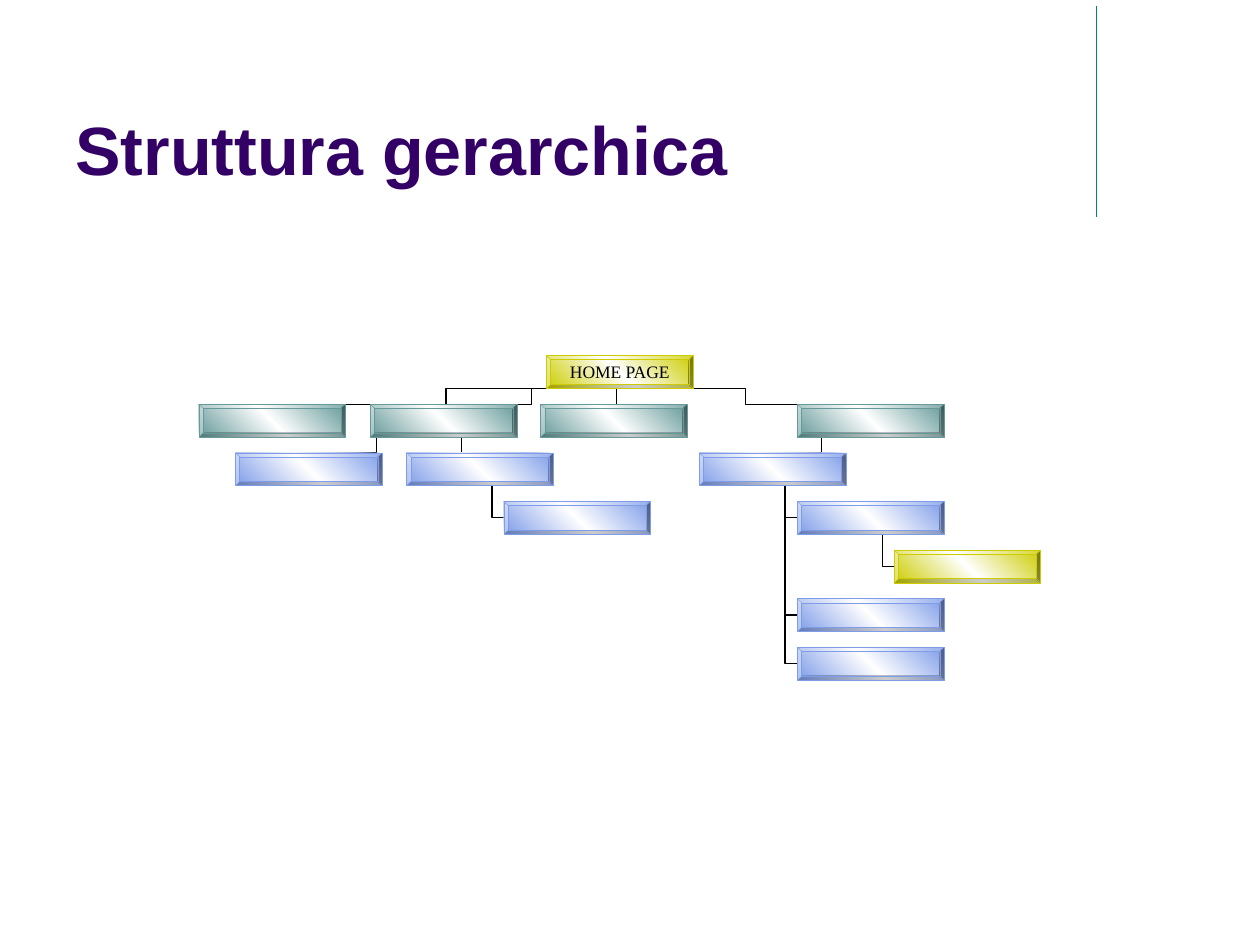
"""Build a slide with a hierarchical site structure diagram."""
from copy import deepcopy

from pptx import Presentation
from pptx.dml.color import RGBColor
from pptx.enum.shapes import MSO_CONNECTOR, MSO_SHAPE
from pptx.enum.text import MSO_ANCHOR, PP_ALIGN
from pptx.oxml.ns import qn
from pptx.util import Cm, Pt

TITLE = "Struttura gerarchica"
YELLOW, TEAL, BLUE = "CCCC00", "669999", "7E9CE8"
BLACK, PURPLE, RULE_COLOR = "000000", "330066", "008080"

# name: (left, row, color, parent, side of the child that is joined, text)
PAGES = {
    "home": (11.02, 0, YELLOW, None, None, "HOME PAGE"),
    "first": (4.01, 1, TEAL, "home", "top", ""),
    "second": (7.47, 1, TEAL, "home", "top", ""),
    "third": (10.9, 1, TEAL, "home", "top", ""),
    "fourth": (16.08, 1, TEAL, "home", "top", ""),
    "second_a": (4.75, 2, BLUE, "second", "top", ""),
    "second_b": (8.2, 2, BLUE, "second", "top", ""),
    "second_b_detail": (10.16, 3, BLUE, "second_b", "left", ""),
    "fourth_a": (14.1, 2, BLUE, "fourth", "top", ""),
    "fourth_a_first": (16.08, 3, BLUE, "fourth_a", "left", ""),
    "fourth_a_second": (16.08, 5, BLUE, "fourth_a", "left", ""),
    "fourth_a_first_detail": (18.03, 4, YELLOW, "fourth_a_first", "left", ""),
    "fourth_a_third": (16.08, 6, BLUE, "fourth_a", "left", ""),
}
BOX_WIDTH, BOX_HEIGHT = 2.95, 0.66
FIRST_TOP, ROW_PITCH = 7.17, 0.98

TITLE_FRAME = {"word_wrap": True, "vertical_anchor": MSO_ANCHOR.BOTTOM}
TITLE_FONT = {"name": "Arial", "size": Pt(39), "bold": True}
BOX_FRAME = {
    "word_wrap": True, "vertical_anchor": MSO_ANCHOR.MIDDLE,
    "margin_left": Cm(0.1), "margin_right": Cm(0.1),
    "margin_top": Cm(0.05), "margin_bottom": Cm(0.05),
}
BOX_FONT = {"name": "Times New Roman", "size": Pt(10), "bold": False}


def color(value):
    return RGBColor.from_string(value)


def set_attributes(target, values):
    for name, value in values.items():
        setattr(target, name, value)


def write_text(shape, text, frame_format, font_format, font_color, alignment):
    set_attributes(shape.text_frame, frame_format)
    paragraph = shape.text_frame.paragraphs[0]
    paragraph.alignment = alignment
    run = paragraph.add_run()
    run.text = text
    set_attributes(run.font, font_format)
    run.font.color.rgb = color(font_color)


def add_line(slide, kind, start, end, line_color):
    connector = slide.shapes.add_connector(kind, *map(Cm, start + end))
    connector.line.color.rgb = color(line_color)
    connector.line.width = Pt(0.75)
    properties = connector._element.spPr
    properties.append(properties.makeelement(qn("a:effectLst"), {}))


def fill_gradient(shape, edge_color):
    shape.fill.gradient()
    shape.fill.gradient_angle = 225
    stop_list = next(shape._element.spPr.iter(qn("a:gsLst")))
    stop_list.append(deepcopy(stop_list[0]))
    stops = zip(shape.fill.gradient_stops, (0, 0.5, 1), (edge_color, "FFFFFF", edge_color))
    for stop, position, stop_color in stops:
        stop.position = position
        stop.color.rgb = color(stop_color)


def box_top(row):
    return FIRST_TOP + row * ROW_PITCH


def add_link(slide, page):
    left, row, _, parent, side, _ = page
    parent_left, parent_row = PAGES[parent][:2]
    if side == "top":
        start = (left + BOX_WIDTH / 2, box_top(row))
    else:
        start = (left, box_top(row) + BOX_HEIGHT / 2)
    end = (parent_left + BOX_WIDTH / 2, box_top(parent_row) + BOX_HEIGHT)
    add_line(slide, MSO_CONNECTOR.ELBOW, start, end, BLACK)


def add_page(slide, page):
    left, row, page_color, _, _, text = page
    shape = slide.shapes.add_shape(
        MSO_SHAPE.BEVEL, *map(Cm, (left, box_top(row), BOX_WIDTH, BOX_HEIGHT)))
    shape.adjustments[0] = 0.125
    shape.shadow.inherit = False
    fill_gradient(shape, page_color)
    shape.line.color.rgb = color(page_color)
    shape.line.width = Pt(0.25)
    if text:
        write_text(shape, text, BOX_FRAME, BOX_FONT, BLACK, PP_ALIGN.CENTER)


def main():
    presentation = Presentation()
    presentation.slide_width, presentation.slide_height = Cm(25.4), Cm(19.05)
    slide = presentation.slides.add_slide(presentation.slide_layouts[6])
    add_line(slide, MSO_CONNECTOR.STRAIGHT, (22.1, 0.13), (22.1, 4.37), RULE_COLOR)
    title = slide.shapes.add_textbox(Cm(1.27), Cm(0.33), Cm(20.96), Cm(3.61))
    write_text(title, TITLE, TITLE_FRAME, TITLE_FONT, PURPLE, PP_ALIGN.LEFT)
    for page in reversed(PAGES.values()):
        if page[3]:
            add_link(slide, page)
    for page in PAGES.values():
        add_page(slide, page)
    presentation.save("out.pptx")


if __name__ == "__main__":
    main()
